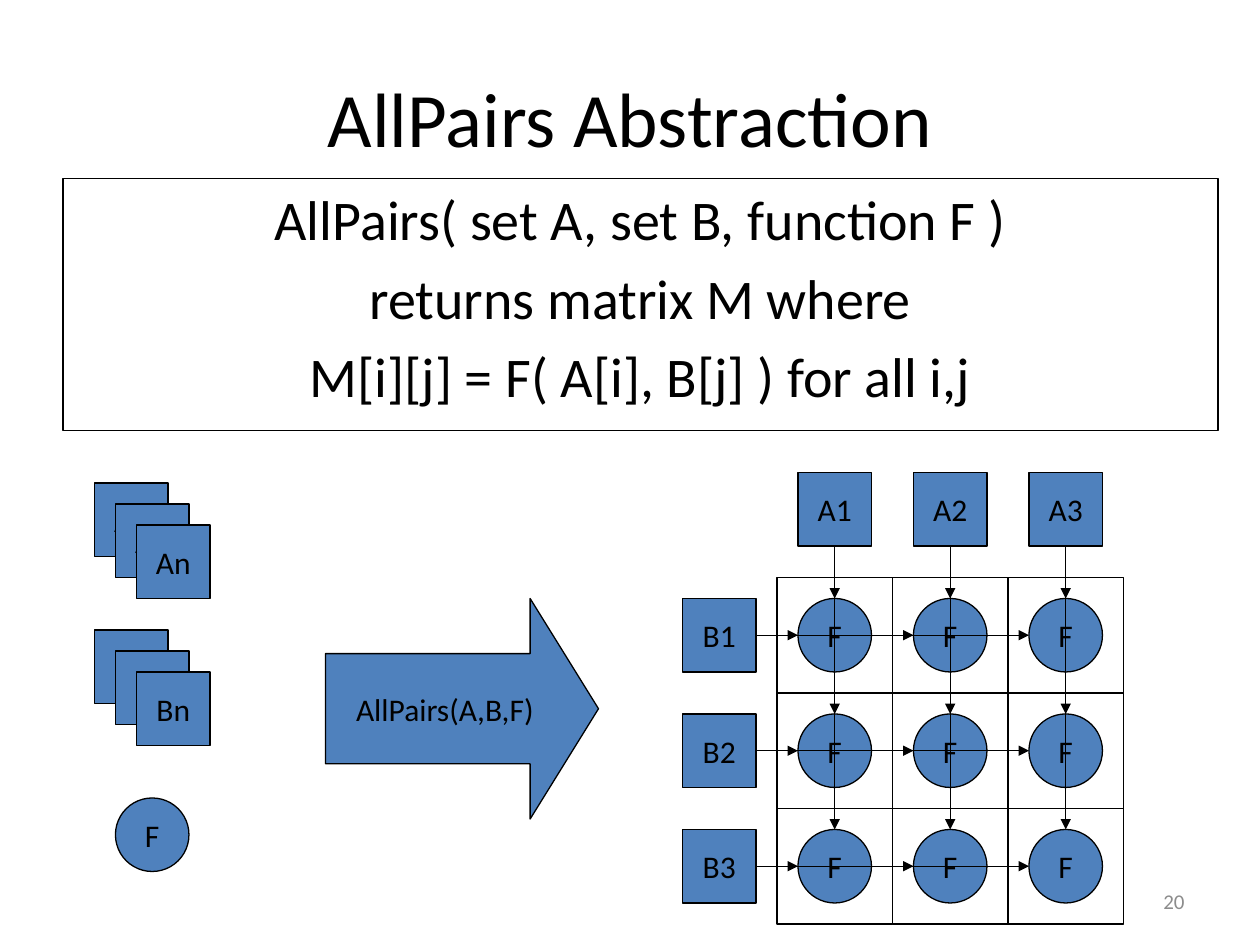
from dataclasses import dataclass

import pptx
import pptx.dml.color
import pptx.enum.shapes
import pptx.enum.text
import pptx.oxml.ns
import pptx.util
from lxml import etree

Pt = pptx.util.Pt
RGB = pptx.dml.color.RGBColor
SHAPE = pptx.enum.shapes.MSO_SHAPE
ALIGN = pptx.enum.text.PP_ALIGN
ANCHOR = pptx.enum.text.MSO_ANCHOR
qn = pptx.oxml.ns.qn


@dataclass(frozen=True)
class Theme:
    font: str = "Calibri"
    ink: RGB = RGB(0x00, 0x00, 0x00)
    fill: RGB = RGB(0x4F, 0x81, 0xBD)
    muted: RGB = RGB(0x8C, 0x8C, 0x8C)
    title: int = 44
    body: int = 32
    label: int = 18
    number: int = 12
    line: float = 0.75


THEME = Theme()
BOX = 42
PITCH = 66
INSET = (PITCH - BOX) / 2
GRID_X, GRID_Y = 444, 330
COUNT = 3


def place(sp, x, y, w, h):
    sp.left, sp.top, sp.width, sp.height = Pt(x), Pt(y), Pt(w), Pt(h)


def style_line(line):
    line.color.rgb = THEME.ink
    line.width = Pt(THEME.line)


def style_text(p, size, color=THEME.ink, align=ALIGN.CENTER):
    p.alignment = align
    p.font.name = THEME.font
    p.font.size = Pt(size)
    p.font.color.rgb = color


def set_title(slide, text):
    sp = slide.shapes.title
    place(sp, 36, 21.6, 648, 90)
    sp.text_frame.text = text
    sp.text_frame.vertical_anchor = ANCHOR.MIDDLE
    style_text(sp.text_frame.paragraphs[0], THEME.title)


def set_definition(slide, lines):
    sp = slide.placeholders[1]
    place(sp, 36, 102, 660, 144)
    style_line(sp.line)
    tf = sp.text_frame
    tf.text = "\n".join(lines)
    tf.auto_size = pptx.enum.text.MSO_AUTO_SIZE.NONE
    for p in tf.paragraphs:
        style_text(p, THEME.body)
        etree.SubElement(p._p.get_or_add_pPr(), qn("a:buNone"))


def add_shape(slide, kind, x, y, w, h):
    sp = slide.shapes.add_shape(kind, Pt(x), Pt(y), Pt(w), Pt(h))
    sp.shadow.inherit = False
    style_line(sp.line)
    return sp


def add_node(slide, kind, text, x, y, w=BOX, h=BOX):
    sp = add_shape(slide, kind, x, y, w, h)
    sp.fill.solid()
    sp.fill.fore_color.rgb = THEME.fill
    tf = sp.text_frame
    tf.text = text
    tf.word_wrap = False
    tf.vertical_anchor = ANCHOR.MIDDLE
    style_text(tf.paragraphs[0], THEME.label)
    return sp


def add_stack(slide, name, x, y):
    for i, suffix in enumerate("11n"):
        add_node(slide, SHAPE.RECTANGLE, name + suffix, x + 12 * i, y + 12 * i)


def add_arrow(slide, source, site, x, y):
    line = slide.shapes.add_connector(
        pptx.enum.shapes.MSO_CONNECTOR.STRAIGHT, 0, 0, Pt(x), Pt(y))
    line.begin_connect(source, site)
    style_line(line.line)
    ln = line.line._get_or_add_ln()
    etree.SubElement(ln, qn("a:tailEnd"), type="triangle")
    etree.SubElement(line._element.spPr, qn("a:effectLst"))


def add_matrix(slide):
    xs = [GRID_X + INSET + PITCH * i for i in range(COUNT)]
    ys = [GRID_Y + INSET + PITCH * i for i in range(COUNT)]
    rows = [add_node(slide, SHAPE.RECTANGLE, f"B{i}", 390, y)
            for i, y in enumerate(ys, 1)]
    columns = [add_node(slide, SHAPE.RECTANGLE, f"A{i}", x, 270)
               for i, x in enumerate(xs, 1)]
    for y in ys:
        for x in xs:
            cell = add_shape(slide, SHAPE.RECTANGLE,
                             x - INSET, y - INSET, PITCH, PITCH)
            cell.fill.background()
            add_node(slide, SHAPE.OVAL, "F", x, y)
    for row, y in zip(rows, ys):
        for column, x in zip(columns, xs):
            add_arrow(slide, column, 2, x + BOX / 2, y)
            add_arrow(slide, row, 3, x, y + BOX / 2)


def add_call(slide):
    sp = add_node(slide, SHAPE.RIGHT_ARROW, "AllPairs(A,B,F)",
                  186, 342, 156, 126)
    sp.adjustments[0] = 0.5
    sp.adjustments[1] = 0.31


def add_slide_number(slide, text):
    sp = slide.shapes.add_textbox(Pt(516), Pt(500.4), Pt(168), Pt(28.8))
    tf = sp.text_frame
    tf.text = text
    tf.word_wrap = True
    tf.vertical_anchor = ANCHOR.MIDDLE
    style_text(tf.paragraphs[0], THEME.number, THEME.muted, ALIGN.RIGHT)


def main():
    prs = pptx.Presentation()
    prs.slide_width, prs.slide_height = Pt(720), Pt(540)
    slide = prs.slides.add_slide(prs.slide_layouts[1])
    set_title(slide, "AllPairs Abstraction")
    set_definition(slide, [
        "AllPairs( set A, set B, function F )",
        "returns matrix M where",
        "M[i][j] = F( A[i], B[j] ) for all i,j",
    ])
    add_stack(slide, "A", 54, 276)
    add_stack(slide, "B", 54, 360)
    add_node(slide, SHAPE.OVAL, "F", 66, 456)
    add_call(slide)
    add_matrix(slide)
    add_slide_number(slide, "20")
    prs.save("out.pptx")


if __name__ == "__main__":
    main()
